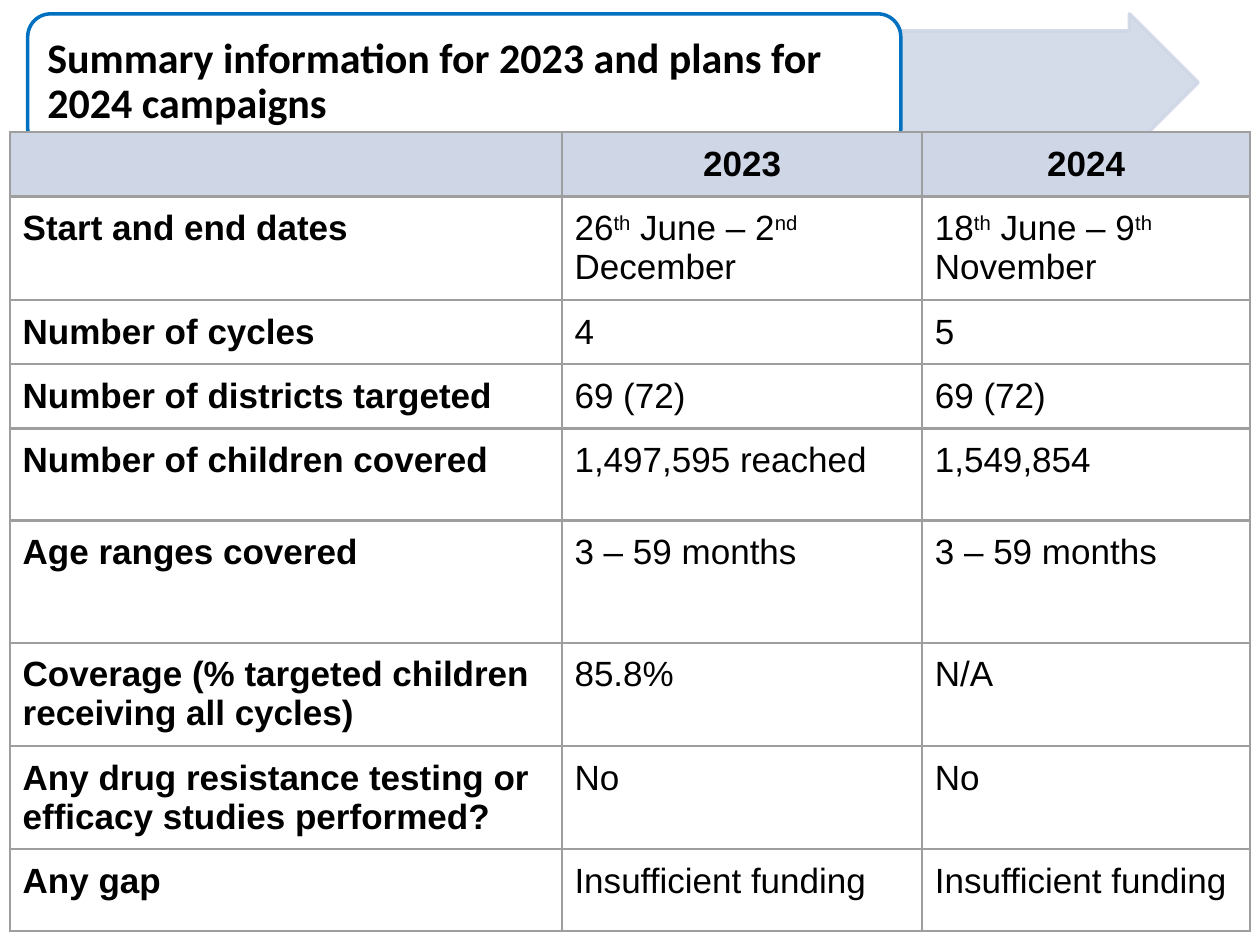
from lxml import etree
from pptx import Presentation, util as u
from pptx.dml.color import RGBColor
from pptx.enum import shapes, text
from pptx.oxml.ns import qn

# Content: ^ encloses superscript text
TITLE = "Summary information for 2023 and plans for 2024 campaigns"
ROWS = [
    ("", "2023", "2024"),
    ("Start and end dates", "26^th^ June – 2^nd^ December", "18^th^ June – 9^th^ November"),
    ("Number of cycles", "4", "5"),
    ("Number of districts targeted", "69 (72)", "69 (72)"),
    ("Number of children covered", "1,497,595 reached", "1,549,854"),
    ("Age ranges covered", "3 – 59 months", "3 – 59 months"),
    ("Coverage (% targeted children receiving all cycles)", "85.8%", "N/A"),
    ("Any drug resistance testing or efficacy studies performed?", "No", "No"),
    ("Any gap", "Insufficient funding", "Insufficient funding"),
]
COLUMN_WIDTHS = [4.38, 2.86, 2.6]
ROW_HEIGHTS = [0.5, 0.5, 0.5, 0.5, 0.73, 0.97, 0.67, 0.73, 0.65]
PALE, BLUE, GREY, WHITE, BLACK = "CFD7E7", "0070C0", "9E9E9E", "FFFFFF", "000000"
BANNER_LEFT, BANNER_TOP, BANNER_WIDTH, BANNER_HEIGHT = 0.22, 0.11, 6.93, 1.09
ARROW_WIDTH, TITLE_INSET = 2.36, 0.055
TABLE_LEFT, TABLE_TOP = 0.08, 1.05


def rgb(value):
    return RGBColor.from_string(value)


def set_font(font, name, size, bold):
    font.name, font.size, font.bold = name, u.Pt(size), bold
    font.color.rgb = rgb(BLACK)


def add_banner_part(kind, left, width, fill, line, adjustments, alpha=None):
    part = slide.shapes.add_shape(kind, u.Inches(left), u.Inches(BANNER_TOP),
                                  u.Inches(width), u.Inches(BANNER_HEIGHT))
    part.shadow.inherit = False
    part.fill.solid()
    part.fill.fore_color.rgb = rgb(fill)
    part.line.color.rgb = rgb(line)
    part.line.width = u.Pt(2)
    for i, value in enumerate(adjustments):
        part.adjustments[i] = value
    if alpha:
        for color in part.element.spPr.iter(qn("a:srgbClr")):
            etree.SubElement(color, qn("a:alpha")).set("val", str(alpha * 1000))


def set_borders(cell, color, width):
    properties = cell._tc.get_or_add_tcPr()
    for i, side in enumerate(("lnL", "lnR", "lnT", "lnB")):
        line = etree.Element(qn(f"a:{side}"), w=str(u.Pt(width)))
        fill = etree.SubElement(line, qn("a:solidFill"))
        etree.SubElement(fill, qn("a:srgbClr"), val=color)
        properties.insert(i, line)


def write_runs(paragraph, content):
    for i, piece in enumerate(content.split("^")):
        run = paragraph.add_run()
        run.text = piece
        if i % 2:
            run._r.get_or_add_rPr().set("baseline", "30000")


prs = Presentation()
prs.slide_width, prs.slide_height = u.Inches(10), u.Inches(7.5)
slide = prs.slides.add_slide(prs.slide_layouts[5])

# Banner: arrow and rounded box
add_banner_part(shapes.MSO_SHAPE.RIGHT_ARROW, BANNER_LEFT + BANNER_WIDTH, ARROW_WIDTH,
                PALE, PALE, [0.75, 0.5], alpha=89)
add_banner_part(shapes.MSO_SHAPE.ROUNDED_RECTANGLE, BANNER_LEFT, BANNER_WIDTH,
                WHITE, BLUE, [0.167])

# Title, brought in front of the banner
title = slide.shapes.title
title.left, title.top = u.Inches(BANNER_LEFT + TITLE_INSET), u.Inches(BANNER_TOP + TITLE_INSET)
title.width = u.Inches(BANNER_WIDTH - 2 * TITLE_INSET)
title.height = u.Inches(BANNER_HEIGHT - 2 * TITLE_INSET)
title.text = TITLE
frame = title.text_frame
frame.word_wrap, frame.auto_size = True, text.MSO_AUTO_SIZE.NONE
frame.vertical_anchor = text.MSO_ANCHOR.MIDDLE
frame.margin_left = frame.margin_right = u.Inches(0.1)
frame.margin_top = frame.margin_bottom = u.Inches(0.05)
heading = frame.paragraphs[0]
heading.alignment, heading.line_spacing = text.PP_ALIGN.LEFT, 0.9
set_font(heading.font, "Calibri", 24, True)
slide.shapes.element.append(title.element)

# Summary table
table = slide.shapes.add_table(
    len(ROWS), len(COLUMN_WIDTHS), u.Inches(TABLE_LEFT), u.Inches(TABLE_TOP),
    u.Inches(sum(COLUMN_WIDTHS)), u.Inches(sum(ROW_HEIGHTS))).table
table.horz_banding = False
for column, width in zip(table.columns, COLUMN_WIDTHS):
    column.width = u.Inches(width)
for r, (row, height) in enumerate(zip(ROWS, ROW_HEIGHTS)):
    table.rows[r].height = u.Inches(height)
    for c, content in enumerate(row):
        cell = table.cell(r, c)
        cell.margin_left = cell.margin_right = u.Inches(0.1)
        cell.margin_top = cell.margin_bottom = u.Inches(0.1)
        if r == 0:
            cell.fill.solid()
            cell.fill.fore_color.rgb = rgb(PALE)
        else:
            cell.fill.background()
        set_borders(cell, GREY, 1.5)
        paragraph = cell.text_frame.paragraphs[0]
        paragraph.alignment = text.PP_ALIGN.LEFT if r else text.PP_ALIGN.CENTER
        set_font(paragraph.font, "Arial", 20, r == 0 or c == 0)
        if content:
            write_runs(paragraph, content)

prs.save("out.pptx")
